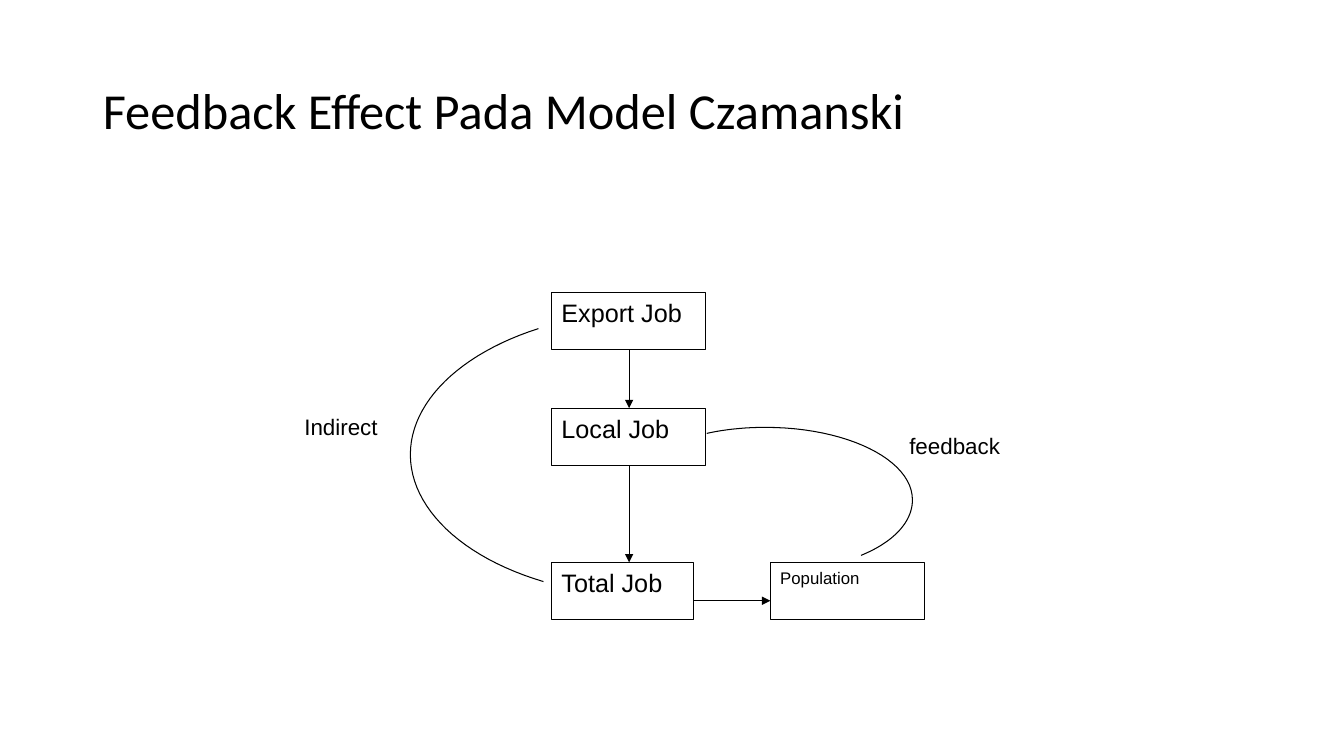
"""Build the slide on the feedback effect in the Czamanski model."""
import dataclasses

import pptx
import pptx.dml.color
import pptx.enum.shapes
import pptx.enum.text
import pptx.oxml
import pptx.oxml.ns
import pptx.util

Inches = pptx.util.Inches


@dataclasses.dataclass(frozen=True)
class Theme:
    ink: str = "000000"
    paper: str = "FFFFFF"
    title_font: str = "Calibri"
    body_font: str = "Arial"
    title_size: int = 36
    job_size: int = 18
    label_size: int = 16
    small_size: int = 12
    line_width: float = 0.75


def rgb(code):
    return pptx.dml.color.RGBColor.from_string(code)


def write_text(frame, text, *, font, size, color, anchor, spacing=None):
    frame.word_wrap = True
    frame.auto_size = pptx.enum.text.MSO_AUTO_SIZE.NONE
    frame.vertical_anchor = anchor
    paragraph = frame.paragraphs[0]
    paragraph.alignment = pptx.enum.text.PP_ALIGN.LEFT
    paragraph.line_spacing = spacing
    run = paragraph.add_run()
    run.text = text
    run.font.name = font
    run.font.size = pptx.util.Pt(size)
    run.font.color.rgb = rgb(color)


def curve_points(start, segments, steps=24):
    points = [start]
    for first, second, end in segments:
        for step in range(1, steps + 1):
            t = step / steps
            weights = ((1 - t) ** 3, 3 * t * (1 - t) ** 2, 3 * t * t * (1 - t), t ** 3)
            corners = (start, first, second, end)
            points.append(tuple(sum(w * c[axis] for w, c in zip(weights, corners))
                                for axis in (0, 1)))
        start = end
    return [(Inches(x), Inches(y)) for x, y in points]


class Diagram:
    def __init__(self, slide, theme):
        self.slide = slide
        self.theme = theme
        self.group = slide.shapes.add_group_shape()

    def title(self, text, left, top, width, height):
        heading = self.slide.shapes.title
        heading.left, heading.top = Inches(left), Inches(top)
        heading.width, heading.height = Inches(width), Inches(height)
        write_text(heading.text_frame, text, font=self.theme.title_font,
                   size=self.theme.title_size, color=self.theme.ink,
                   anchor=pptx.enum.text.MSO_ANCHOR.MIDDLE, spacing=0.9)

    def outline(self, line):
        line.color.rgb = rgb(self.theme.ink)
        line.width = pptx.util.Pt(self.theme.line_width)

    def box(self, text, left, top, width, size, outlined=True, height=0.57):
        node = self.group.shapes.add_shape(
            pptx.enum.shapes.MSO_SHAPE.RECTANGLE,
            Inches(left), Inches(top), Inches(width), Inches(height))
        node.shadow.inherit = False
        node.fill.solid()
        node.fill.fore_color.rgb = rgb(self.theme.paper)
        if outlined:
            self.outline(node.line)
        else:
            node.line.fill.background()
        write_text(node.text_frame, text, font=self.theme.body_font, size=size,
                   color=self.theme.ink, anchor=pptx.enum.text.MSO_ANCHOR.TOP)

    def arrow(self, start, end):
        link = self.group.shapes.add_connector(
            pptx.enum.shapes.MSO_CONNECTOR.STRAIGHT, *map(Inches, start + end))
        self.outline(link.line)
        properties = link._element.spPr
        head = pptx.oxml.parse_xml(
            f'<a:tailEnd {pptx.oxml.ns.nsdecls("a")} type="triangle"/>')
        properties.find(pptx.oxml.ns.qn("a:ln")).append(head)
        properties.append(pptx.oxml.parse_xml(
            f'<a:effectLst {pptx.oxml.ns.nsdecls("a")}/>'))

    def curve(self, start, *segments):
        first, *rest = curve_points(start, segments)
        builder = self.group.shapes.build_freeform(*first)
        builder.add_line_segments(rest, close=False)
        arc = builder.convert_to_shape()
        arc.shadow.inherit = False
        arc.fill.background()
        self.outline(arc.line)


def main():
    theme = Theme()
    deck = pptx.Presentation()
    deck.slide_width, deck.slide_height = Inches(13.33), Inches(7.5)
    diagram = Diagram(deck.slides.add_slide(deck.slide_layouts[5]), theme)

    diagram.title("Feedback Effect Pada Model Czamanski", 0.92, 0.4, 11.5, 1.45)
    for text, left, top in (("Indirect", 2.92, 4.05), ("feedback", 8.92, 4.24)):
        diagram.box(text, left, top, 1.28, theme.label_size, outlined=False)
    for text, left, top, width, size in (
            ("Export Job", 5.47, 2.9, 1.53, theme.job_size),
            ("Local Job", 5.47, 4.05, 1.53, theme.job_size),
            ("Total Job", 5.47, 5.58, 1.41, theme.job_size),
            ("Population", 7.64, 5.58, 1.53, theme.small_size)):
        diagram.box(text, left, top, width, size)

    for start, end in (((6.24, 3.47), (6.24, 4.05)),
                       ((6.24, 4.62), (6.24, 5.58)),
                       ((6.88, 5.96), (7.64, 5.96))):
        diagram.arrow(start, end)

    diagram.curve((5.34, 3.26),
                  ((4.56, 3.51), (4.07, 3.99), (4.07, 4.51)),
                  ((4.07, 5.04), (4.58, 5.53), (5.39, 5.77)))
    diagram.curve((7.01, 4.3),
                  ((7.19, 4.26), (7.39, 4.24), (7.59, 4.24)),
                  ((8.4, 4.24), (9.05, 4.56), (9.05, 4.96)),
                  ((9.05, 5.18), (8.86, 5.38), (8.54, 5.51)))
    deck.save("out.pptx")


if __name__ == "__main__":
    main()
